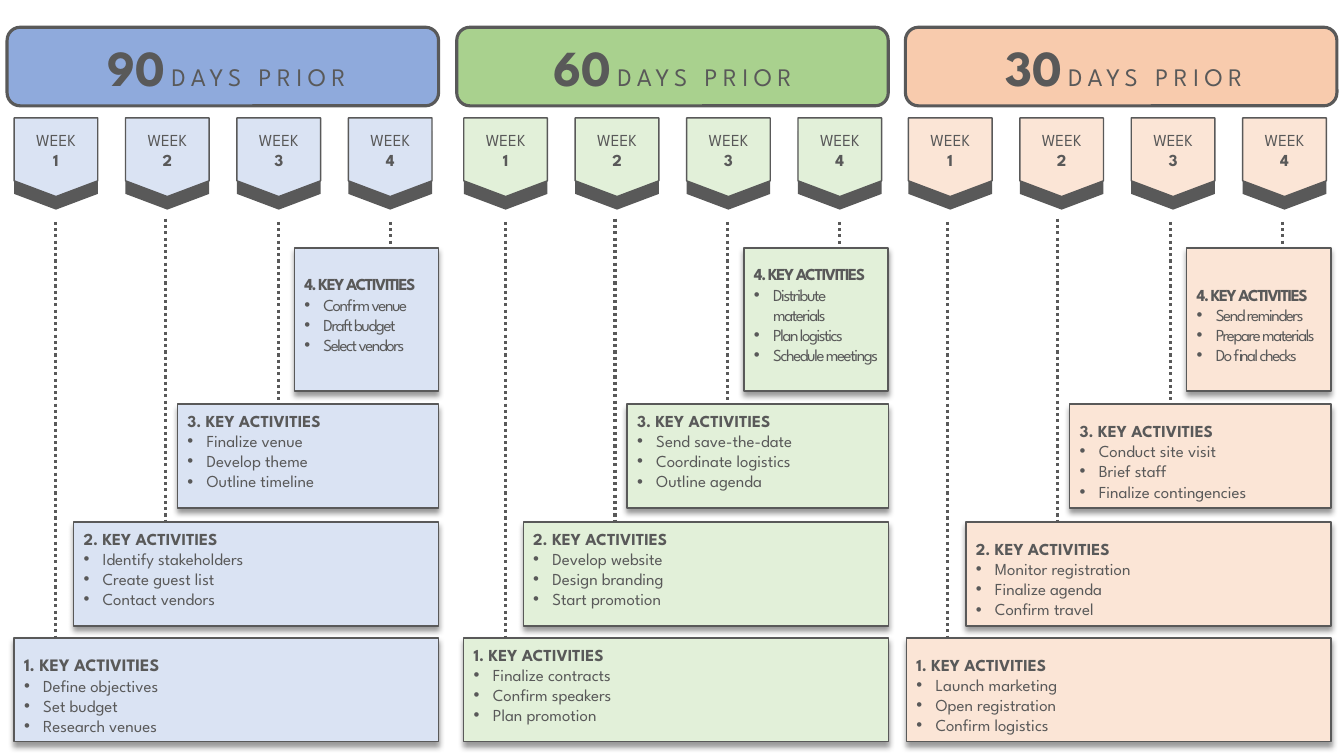
from lxml import etree
from pptx import Presentation
from pptx.dml.color import RGBColor
from pptx.enum.dml import MSO_LINE
from pptx.enum.shapes import MSO_CONNECTOR, MSO_SHAPE
from pptx.enum.text import MSO_ANCHOR, PP_ALIGN
from pptx.oxml.ns import qn
from pptx.util import Inches, Pt

ROUND, RECT = MSO_SHAPE.ROUNDED_RECTANGLE, MSO_SHAPE.RECTANGLE
TAG = MSO_SHAPE.FLOWCHART_OFFPAGE_CONNECTOR
LINE, DOTS = MSO_CONNECTOR.STRAIGHT, MSO_LINE.ROUND_DOT
MIDDLE, LEFT, CENTER = MSO_ANCHOR.MIDDLE, PP_ALIGN.LEFT, PP_ALIGN.CENTER

FONT = "League Spartan"
COLORS = {
    "ink": "595959", "shade": "000000",
    "blue": "8FAADC", "pale blue": "DAE3F3",
    "green": "A9D18E", "pale green": "E2F0D9",
    "peach": "F8CBAD", "pale peach": "FBE5D6",
}

# Per phase: days, colour, banner left, banner text shift, tag left, box left,
# first heading size, and the activities of each week with the text's lift
PHASES = [
    ("90", "blue", 0.07, 0.07, 0.14, 0.14, 12.5, [
        (0, ["Define objectives", "Set budget", "Research venues"]),
        (0.2, ["Identify stakeholders", "Create guest list", "Contact vendors"]),
        (0.2, ["Finalize venue", "Develop theme", "Outline timeline"]),
        (0.2, ["Confirm venue", "Draft budget", "Select vendors"])]),
    ("60", "green", 4.53, 0, 4.6, 4.6, 12, [
        (0.2, ["Finalize contracts", "Confirm speakers", "Plan promotion"]),
        (0.2, ["Develop website", "Design branding", "Start promotion"]),
        (0.2, ["Send save-the-date", "Coordinate logistics", "Outline agenda"]),
        (0.2, ["Distribute materials", "Plan logistics", "Schedule meetings"])]),
    ("30", "peach", 8.98, 0.05, 9.01, 8.99, 12, [
        (0, ["Launch marketing", "Open registration", "Confirm logistics"]),
        (0, ["Monitor registration", "Finalize agenda", "Confirm travel"]),
        (0, ["Conduct site visit", "Brief staff", "Finalize contingencies"]),
        (0, ["Send reminders", "Prepare materials", "Do final checks"])]),
]

# Per week: box indent, top, height; dotted line offset, start, end; tracking
STEPS = [
    (0, 6.33, 1.03, 0.41, 2.2, 6.49, 0),
    (0.59, 5.18, 1.03, 1.5, 2.17, 6.06, 0),
    (1.62, 4.01, 1.03, 2.62, 2.2, 4.89, 0),
    (2.78, 2.46, 1.42, 3.73, 2.2, 3.64, -1),
]
BOX_WIDTH, TAG_STEP = 4.21, 1.105


class Board:
    def __init__(self, slide):
        self.slide = slide

    def color(self, name):
        return RGBColor.from_string(COLORS[name])

    def shape(self, kind, left, top, width, height, fill, line=0):
        shape = self.slide.shapes.add_shape(
            kind, Inches(left), Inches(top), Inches(width), Inches(height))
        shape.shadow.inherit = False
        shape.fill.solid()
        shape.fill.fore_color.rgb = self.color(fill)
        if line:
            shape.line.color.rgb = self.color("ink")
            shape.line.width = Pt(line)
        else:
            shape.line.fill.background()
        shape.text_frame.word_wrap = True
        shape.text_frame.vertical_anchor = MIDDLE
        return shape

    def style(self, para, size, bold=False, align=CENTER):
        para.alignment = align
        font = para.font
        font.name, font.size, font.bold = FONT, Pt(size), bold
        font.color.rgb = self.color("ink")

    def track(self, run, points):
        run._r.get_or_add_rPr().set("spc", str(points * 100))

    def bullet(self, para):
        props = para._p.get_or_add_pPr()
        props.set("marL", str(Inches(0.19)))
        props.set("indent", str(-Inches(0.19)))
        etree.SubElement(props, qn("a:buFont")).set("typeface", "Arial")
        etree.SubElement(props, qn("a:buChar")).set("char", "•")

    def shadow(self, shape):
        effects = shape._element.spPr.find(qn("a:effectLst"))
        outer = etree.SubElement(effects, qn("a:outerShdw"), blurRad=str(Pt(4)),
                                 dist=str(Pt(3)), dir="5400000",
                                 algn="t", rotWithShape="0")
        tint = etree.SubElement(outer, qn("a:srgbClr"), val=COLORS["shade"])
        etree.SubElement(tint, qn("a:alpha"), val="40000")

    def banner(self, left, days, fill, shift):
        frame = self.shape(ROUND, left, 0.27, 4.28, 0.78, fill, 2.25).text_frame
        frame.margin_left = Inches(0.1 + shift)
        para = frame.paragraphs[0]
        self.style(para, 18)
        count = para.add_run()
        count.text = days
        count.font.size, count.font.bold = Pt(36), True
        para.add_run().text = " "
        label = para.add_run()
        label.text = "DAYS PRIOR"
        self.track(label, 4)

    def tag(self, left, week, fill):
        self.shape(TAG, left, 1.3, 0.83, 0.78, "ink")
        frame = self.shape(TAG, left, 1.17, 0.83, 0.78, fill, 1).text_frame
        frame.text = f"WEEK\n{week}"
        for para, bold in zip(frame.paragraphs, (False, True)):
            self.style(para, 12, bold)

    def dots(self, x, start, end):
        line = self.slide.shapes.add_connector(
            LINE, Inches(x), Inches(start), Inches(x), Inches(end))
        line.line.color.rgb = self.color("ink")
        line.line.width = Pt(2.25)
        line.line.dash_style = DOTS
        etree.SubElement(line._element.spPr, qn("a:effectLst"))

    def box(self, place, fill, week, items, size, lift, space):
        shape = self.shape(RECT, *place, fill, 1)
        self.shadow(shape)
        frame = shape.text_frame
        frame.margin_bottom = Inches(0.05 + lift)
        frame.text = "\n".join([f"{week}. KEY ACTIVITIES", *items])
        head, *rest = frame.paragraphs
        head.line_spacing = 1.5
        self.style(head, size, True, LEFT)
        for para in rest:
            self.bullet(para)
            self.style(para, 12, False, LEFT)
        if space:
            for para in frame.paragraphs:
                self.track(para.runs[0], space)


def main():
    deck = Presentation()
    deck.slide_width, deck.slide_height = Inches(13.33), Inches(7.5)
    board = Board(deck.slides.add_slide(deck.slide_layouts[6]))

    for days, hue, left, shift, tag_left, box_left, size, weeks in PHASES:
        pale = f"pale {hue}"
        # Banner and week tags
        board.banner(left, days, hue, shift)
        for i in range(len(weeks)):
            board.tag(tag_left + i * TAG_STEP, i + 1, pale)
        # Stairs of activities, each hung from its week
        for i, (step, (lift, items)) in enumerate(zip(STEPS, weeks)):
            indent, top, height, drop, start, end, space = step
            board.dots(box_left + drop, start, end)
            place = box_left + indent, top, BOX_WIDTH - indent, height
            board.box(place, pale, i + 1, items, 12 if i else size, lift, space)

    deck.save("out.pptx")


if __name__ == "__main__":
    main()
